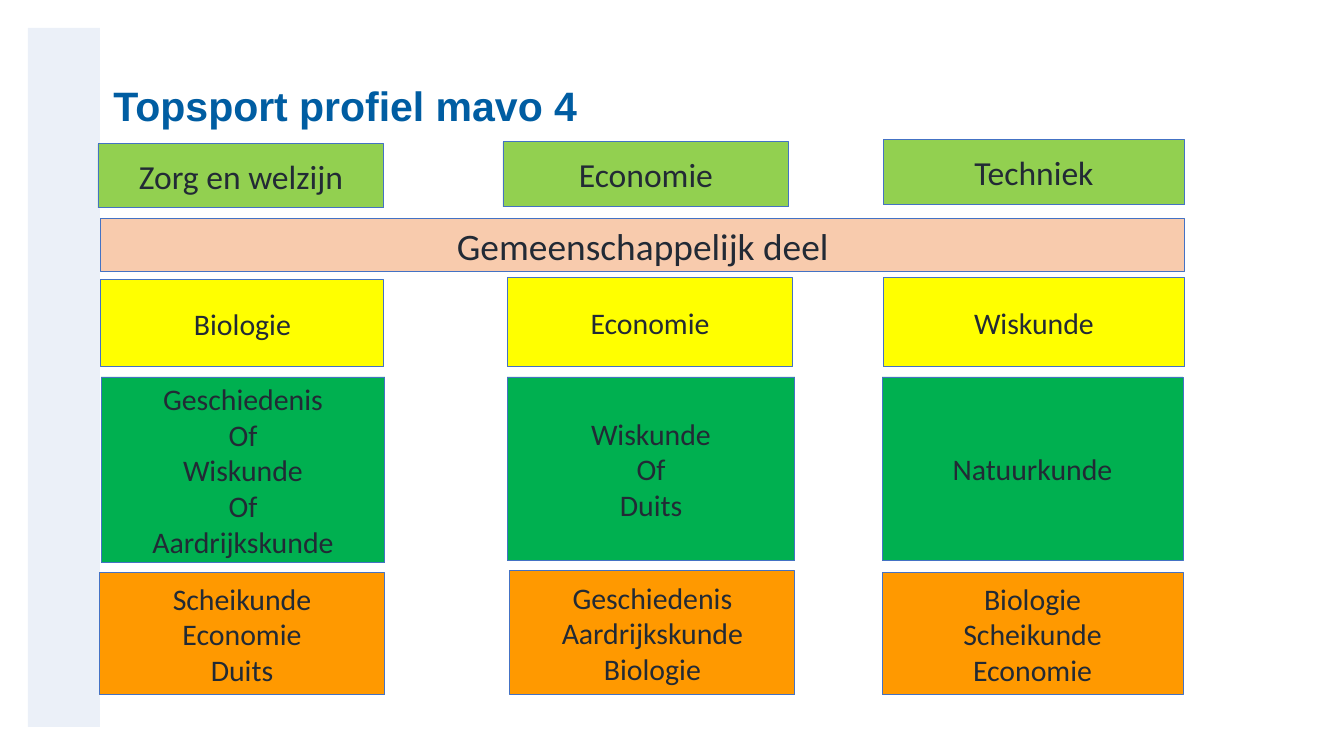
from lxml import etree
from pptx import Presentation
from pptx.dml.color import RGBColor
from pptx.enum.shapes import MSO_SHAPE
from pptx.enum.text import MSO_ANCHOR, PP_ALIGN
from pptx.oxml.ns import qn
from pptx.util import Pt

RECTANGLE = MSO_SHAPE.RECTANGLE
MIDDLE = MSO_ANCHOR.MIDDLE
CENTER = PP_ALIGN.CENTER
LEFT = PP_ALIGN.LEFT

EMU_PER_PX = 914400 / 134.4
BLUE = RGBColor(0x44, 0x72, 0xC4)
TITLE_BLUE = RGBColor(0x00, 0x5D, 0xA2)
DARK = RGBColor(0x22, 0x2A, 0x35)
LIME = RGBColor(0x92, 0xD0, 0x50)
PEACH = RGBColor(0xF8, 0xCB, 0xAD)
YELLOW = RGBColor(0xFF, 0xFF, 0x00)
GREEN = RGBColor(0x00, 0xB0, 0x50)
ORANGE = RGBColor(0xFF, 0x99, 0x00)

ROWS = [
    (LIME, 18, [
        ((98, 144, 286, 64), "Zorg en welzijn"),
        ((503, 142, 286, 65), "Economie"),
        ((883, 140, 302, 65), "Techniek"),
    ]),
    (PEACH, 20, [((101, 219, 1084, 53), "Gemeenschappelijk deel")]),
    (YELLOW, 16, [
        ((101, 280, 283, 87), "Biologie"),
        ((507, 278, 286, 89), "Economie"),
        ((883, 278, 302, 89), "Wiskunde"),
    ]),
    (GREEN, 16, [
        ((101, 377, 284, 186), "Geschiedenis\nOf\nWiskunde\nOf\nAardrijkskunde"),
        ((507, 377, 288, 184), "Wiskunde\nOf\nDuits"),
        ((882, 377, 301, 184), "Natuurkunde"),
    ]),
    (ORANGE, 16, [
        ((99, 573, 286, 122), "Scheikunde\nEconomie\nDuits"),
        ((510, 571, 285, 124), "Geschiedenis\nAardrijkskunde\nBiologie"),
        ((882, 573, 301, 122), "Biologie\nScheikunde\nEconomie"),
    ]),
]


def px(value):
    return round(value * EMU_PER_PX)


def add_rectangle(slide, box, color):
    shape = slide.shapes.add_shape(RECTANGLE, *map(px, box))
    shape.shadow.inherit = False
    shape.fill.solid()
    shape.fill.fore_color.rgb = color
    return shape


def add_side_bar(slide):
    shape = add_rectangle(slide, (28, 28, 72, 699), BLUE)
    shape.line.fill.background()
    color = shape._element.spPr.find(qn("a:solidFill")).find(qn("a:srgbClr"))
    etree.SubElement(color, qn("a:alpha")).set("val", "10000")


def format_text(text_frame, alignment, font_name, size, color, bold=False):
    text_frame.word_wrap = True
    text_frame.vertical_anchor = MIDDLE
    text_frame.margin_top = text_frame.margin_bottom = 0
    for paragraph in text_frame.paragraphs:
        paragraph.alignment = alignment
        for run in paragraph.runs:
            run.font.name = font_name
            run.font.size = Pt(size)
            run.font.bold = bold
            run.font.color.rgb = color


def set_title(slide, text):
    title = slide.shapes.title
    title.left, title.top, title.width, title.height = map(px, (100, 79, 1175, 59))
    title.text_frame.text = text
    format_text(title.text_frame, LEFT, "Arial", 22, TITLE_BLUE, bold=True)
    title.text_frame.paragraphs[0].line_spacing = 0.9


def add_subject_box(slide, box, text, color, size):
    shape = add_rectangle(slide, box, color)
    shape.line.color.rgb = BLUE
    shape.line.width = Pt(0.5)
    shape.text_frame.text = text
    format_text(shape.text_frame, CENTER, "Calibri", size, DARK)


def main():
    presentation = Presentation()
    presentation.slide_width = px(1344)
    presentation.slide_height = px(756)
    slide = presentation.slides.add_slide(presentation.slide_layouts[5])
    add_side_bar(slide)
    set_title(slide, "Topsport profiel mavo 4")
    for color, size, boxes in ROWS:
        for box, text in boxes:
            add_subject_box(slide, box, text, color, size)
    presentation.save("out.pptx")


if __name__ == "__main__":
    main()
